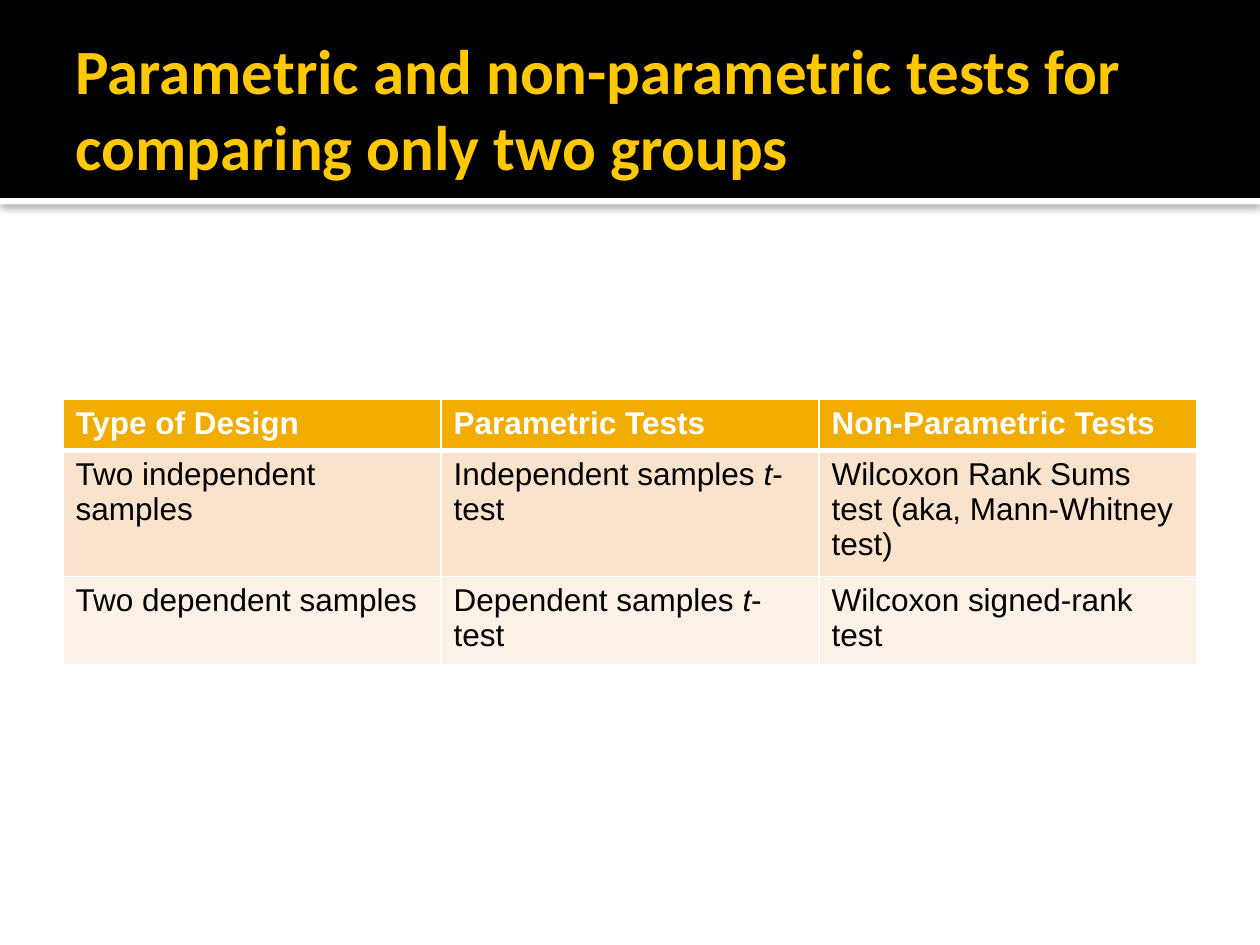
from dataclasses import dataclass
from lxml.etree import SubElement as Sub
from pptx import Presentation as Deck
from pptx.dml.color import RGBColor as Rgb
from pptx.enum.shapes import MSO_SHAPE as Kind
from pptx.enum.text import MSO_ANCHOR as Anchor
from pptx.oxml.ns import qn
from pptx.util import Cm, Pt


@dataclass(frozen=True)
class Theme:
    white: str = "FFFFFF"
    black: str = "000000"
    gold: str = "FFC800"
    head: str = "F0AD00"
    bands: tuple = ("F9E3CC", "FCF1E7")
    title: int = 36
    body: int = 18
    title_font: str = "Calibri"
    body_font: str = "Arial"


def apply(obj, form):
    for key, val in form.items():
        setattr(obj, key, val)


def paint(obj, tone):
    obj.fill.solid()
    obj.fill.fore_color.rgb = Rgb.from_string(tone)


class Page:
    def __init__(self, slide, theme):
        self.slide = slide
        self.theme = theme

    def words(self, para, runs, tone, form):
        for text, slant in runs:
            run = para.add_run()
            run.text = text
            apply(run.font, {**form, "italic": slant})
            run.font.color.rgb = Rgb.from_string(tone)

    def bar(self, top, high, tone):
        box = self.slide.shapes.add_shape(
            Kind.RECTANGLE, 0, Cm(top), Cm(25.4), Cm(high))
        box.shadow.inherit = False
        paint(box, tone)
        box.line.fill.background()
        return box

    def shade(self, box):
        group = box.element.spPr.find(qn("a:effectLst"))
        drop = Sub(group, qn("a:outerShdw"), blurRad=str(Pt(5)),
                   dist=str(Pt(0.8)), dir="5400000", algn="t", rotWithShape="0")
        tone = Sub(drop, qn("a:srgbClr"), val=self.theme.black)
        Sub(tone, qn("a:alpha"), val="60000")

    def title(self, text, area):
        look = self.theme
        frame = self.slide.shapes.add_textbox(*map(Cm, area)).text_frame
        apply(frame, {"word_wrap": True, "vertical_anchor": Anchor.MIDDLE,
                      "margin_left": Cm(0.25), "margin_right": Cm(0.13),
                      "margin_top": Cm(0.13), "margin_bottom": Cm(0.13)})
        self.words(frame.paragraphs[0], [(text, False)], look.gold,
                   {"name": look.title_font, "size": Pt(look.title), "bold": True})

    def edge(self, cell, sides):
        props = cell._tc.get_or_add_tcPr()
        for spot, (side, wide) in enumerate(sides.items()):
            line = Sub(props, qn(f"a:ln{side}"), w=str(Pt(wide)))
            Sub(Sub(line, qn("a:solidFill")), qn("a:srgbClr"), val=self.theme.white)
            props.insert(spot, line)

    def table(self, rows, left, top, wide, highs):
        look = self.theme
        grid = self.slide.shapes.add_table(
            len(rows), len(rows[0]), Cm(left), Cm(top),
            Cm(wide * len(rows[0])), Cm(sum(highs))).table
        for col in grid.columns:
            col.width = Cm(wide)
        for i, (row, high) in enumerate(zip(rows, highs)):
            grid.rows[i].height = Cm(high)
            head = i == 0
            fill = look.head if head else look.bands[(i - 1) % 2]
            tone = look.white if head else look.black
            form = {"name": look.body_font, "size": Pt(look.body), "bold": head}
            sides = {"L": 1, "R": 1, "T": 3 if i == 1 else 1, "B": 3 if head else 1}
            for j, item in enumerate(row):
                cell = grid.cell(i, j)
                paint(cell, fill)
                self.edge(cell, sides)
                runs = [(item, False)] if isinstance(item, str) else item
                self.words(cell.text_frame.paragraphs[0], runs, tone, form)


def t_test(kind):
    return [(f"{kind} samples ", False), ("t", True), ("-test", False)]


def main():
    deck = Deck()
    apply(deck, {"slide_width": Cm(25.4), "slide_height": Cm(19.05)})
    look = Theme()
    page = Page(deck.slides.add_slide(deck.slide_layouts[6]), look)
    page.shade(page.bar(3.99, 0.13, look.white))
    page.bar(0, 3.99, look.black)
    page.title("Parametric and non-parametric tests for comparing only two groups",
               (1.27, 0.43, 22.86, 3.48))
    rows = [
        ["Type of Design", "Parametric Tests", "Non-Parametric Tests"],
        ["Two independent samples", t_test("Independent"),
         "Wilcoxon Rank Sums test (aka, Mann-Whitney test)"],
        ["Two dependent samples", t_test("Dependent"), "Wilcoxon signed-rank test"],
    ]
    page.table(rows, 1.27, 8.05, 7.62, (1.03, 1.78, 1.03))
    deck.save("out.pptx")


if __name__ == "__main__":
    main()
